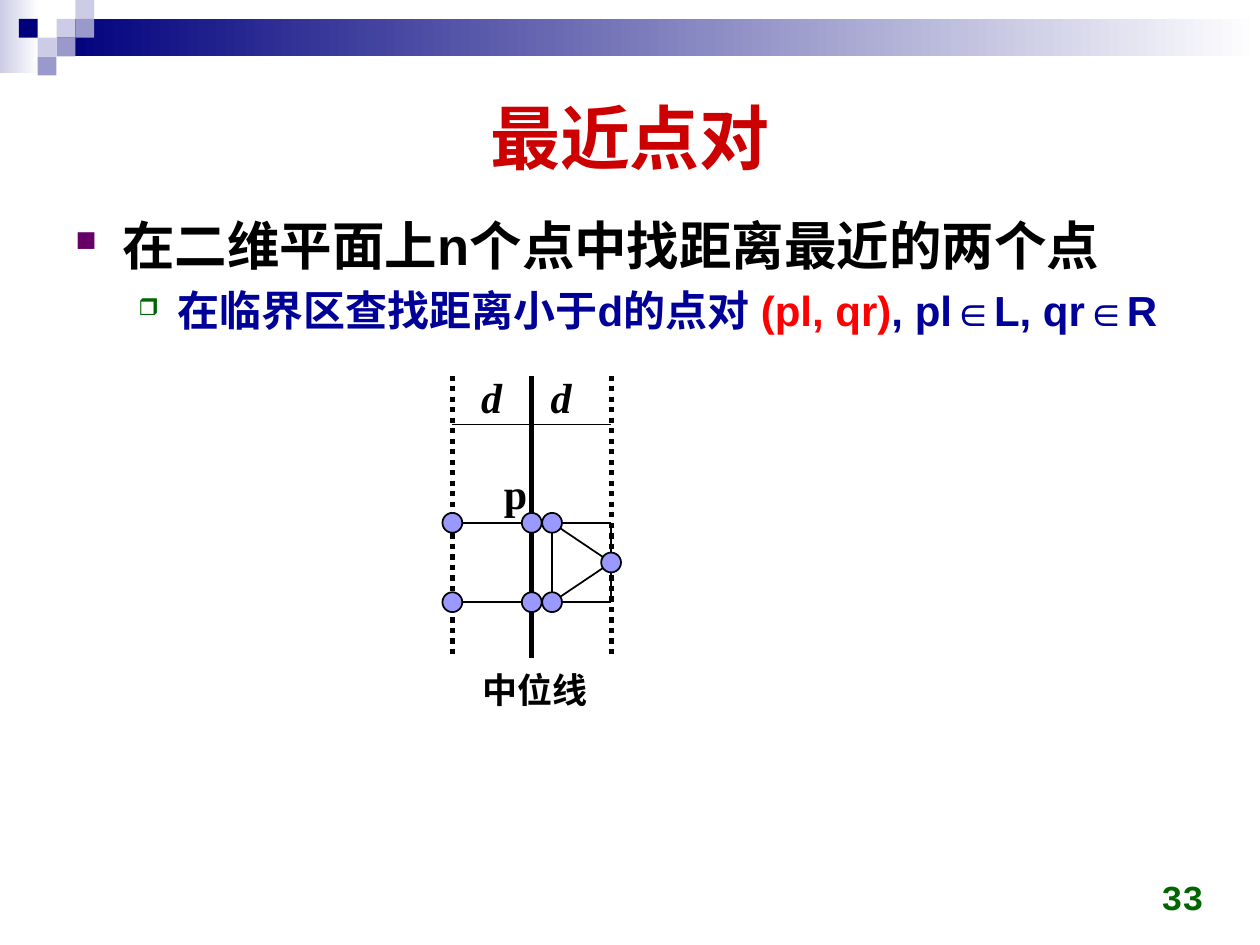
from lxml.etree import SubElement
from pptx import Presentation
from pptx.dml.color import RGBColor
from pptx.enum.dml import MSO_LINE
from pptx.enum.shapes import MSO_CONNECTOR, MSO_SHAPE
from pptx.enum.text import MSO_ANCHOR, PP_ALIGN
from pptx.oxml.ns import qn
from pptx.util import Cm, Pt

BLACK, NAVY, PALE, MEDIUM, WHITE = "000000", "00007D", "CCCCE6", "9999CC", "FFFFFF"

# Header: left, top, width, height in cm, then one colour or two for a gradient
BANDS = [(0, 0, 0.79, 1.47, (PALE, WHITE)), (1.14, 0.38, 24.26, 0.76, (NAVY, WHITE))]
TILE = 0.38
TILES = [  # column, row, colour
    (3, 1, PALE), (4, 0, PALE), (4, 1, MEDIUM), (2, 2, PALE),
    (1, 1, NAVY), (3, 2, MEDIUM), (2, 3, MEDIUM),
]

# Each item: size, indent and hanging in cm, bullet, bullet colour, runs
BODY = [
    (30, 0.95, 0.95, "■", "660066", [("在二维平面上n个点中找距离最近的两个点", BLACK)]),
    (24, 2.06, 0.79, "❒", "006600", [
        ("在临界区查找距离小于d的点对 ", "000099"),
        ("(pl, qr)", "FF0000"),
        (", pl∈L, qr∈R", "000099"),
    ]),
]

# Diagram, in cm: a strip of half-width D on both sides of the median line
D = 1.6
MEDIAN = 10.72
LEFT, RIGHT = MEDIAN - D, MEDIAN + D
INNER = 11.13
STRIP_TOP, STRIP_BOTTOM = 7.57, 13.26
MEASURE = 8.56
UPPER = 10.54
LOWER = UPPER + D
APEX = UPPER + D / 2
RADIUS = 0.2
BORDERS = [(LEFT, MSO_LINE.ROUND_DOT), (MEDIAN, None), (RIGHT, MSO_LINE.ROUND_DOT)]
EDGES = [
    (LEFT, MEASURE, RIGHT, MEASURE),
    (LEFT, UPPER, RIGHT, UPPER),
    (LEFT, LOWER, RIGHT, LOWER),
    (RIGHT, UPPER, RIGHT, LOWER),
    (INNER, UPPER, INNER, LOWER),
    (INNER, UPPER, RIGHT, APEX),
    (INNER, LOWER, RIGHT, APEX),
]
POINTS = [(x, y) for x in (LEFT, MEDIAN, INNER) for y in (UPPER, LOWER)] + [(RIGHT, APEX)]
LABELS = [  # text, left, top, width, height, size, font, italic
    ("p", 9.91, 9.3, 0.99, 1.3, 24, "Times New Roman", False),
    ("d", 9.45, 7.37, 0.94, 1.3, 24, "Times New Roman", True),
    ("d", 10.85, 7.37, 0.94, 1.3, 24, "Times New Roman", True),
    ("中位线", 9.47, 13.36, 2.67, 1.12, 20, "Arial", False),
]


def rgb(value):
    return RGBColor.from_string(value)


def style_run(run, size, color, font="Arial", italic=False):
    run.font.size, run.font.name = Pt(size), font
    run.font.bold, run.font.italic = True, italic
    run.font.color.rgb = rgb(color)
    SubElement(run._r.get_or_add_rPr(), qn("a:ea")).set("typeface", font)


def add_text_box(slide, left, top, width, height, anchor=MSO_ANCHOR.TOP, wrap=True):
    text_frame = slide.shapes.add_textbox(Cm(left), Cm(top), Cm(width), Cm(height)).text_frame
    text_frame.word_wrap, text_frame.vertical_anchor = wrap, anchor
    return text_frame


def add_line_of_text(slide, text, box, size, color, font="Arial", italic=False,
                     align=PP_ALIGN.LEFT, **options):
    text_frame = add_text_box(slide, *box, **options)
    text_frame.text = text
    paragraph = text_frame.paragraphs[0]
    paragraph.alignment = align
    style_run(paragraph.runs[0], size, color, font, italic)


def add_filled(slide, kind, left, top, width, height, fill):
    shape = slide.shapes.add_shape(kind, Cm(left), Cm(top), Cm(width), Cm(height))
    shape.shadow.inherit = False
    shape.line.fill.background()
    if isinstance(fill, tuple):
        shape.fill.gradient()
        shape.fill.gradient_angle = 0
        for stop, color in zip(shape.fill.gradient_stops, fill):
            stop.color.rgb = rgb(color)
    else:
        shape.fill.solid()
        shape.fill.fore_color.rgb = rgb(fill)
    return shape


def add_line(slide, x1, y1, x2, y2, width=1, dash=None):
    line = slide.shapes.add_connector(MSO_CONNECTOR.STRAIGHT, Cm(x1), Cm(y1), Cm(x2), Cm(y2))
    line.line.color.rgb = rgb(BLACK)
    line.line.width = Pt(width)
    if dash:
        line.line.dash_style = dash
    SubElement(line._element.spPr, qn("a:effectLst"))


def set_bullet(paragraph, character, color, indent, hanging):
    properties = paragraph._p.get_or_add_pPr()
    properties.set("marL", str(Cm(indent)))
    properties.set("indent", str(-Cm(hanging)))
    bullet_color = SubElement(properties, qn("a:buClr"))
    SubElement(bullet_color, qn("a:srgbClr")).set("val", color)
    SubElement(properties, qn("a:buSzPct")).set("val", "55000")
    SubElement(properties, qn("a:buChar")).set("char", character)


def add_header(slide):
    for *box, colors in BANDS:
        add_filled(slide, MSO_SHAPE.RECTANGLE, *box, colors)
    for column, row, color in TILES:
        add_filled(slide, MSO_SHAPE.RECTANGLE, column * TILE, row * TILE, TILE, TILE, color)


def add_body(slide):
    text_frame = add_text_box(slide, 1.27, 4.11, 22.8, 13.2)
    for index, (size, indent, hanging, bullet, bullet_color, runs) in enumerate(BODY):
        paragraph = text_frame.add_paragraph() if index else text_frame.paragraphs[0]
        paragraph.level = index
        paragraph.line_spacing = 1.05
        paragraph.space_before = Pt(size * 0.15)
        set_bullet(paragraph, bullet, bullet_color, indent, hanging)
        for text, color in runs:
            run = paragraph.add_run()
            run.text = text
            style_run(run, size, color)


def add_diagram(slide):
    for x, dash in BORDERS:
        add_line(slide, x, STRIP_TOP, x, STRIP_BOTTOM, 3, dash)
    for edge in EDGES:
        add_line(slide, *edge)
    for text, *box, size, font, italic in LABELS:
        add_line_of_text(slide, text, box, size, BLACK, font, italic, wrap=False)
    for x, y in POINTS:
        point = add_filled(slide, MSO_SHAPE.OVAL, x - RADIUS, y - RADIUS,
                           2 * RADIUS, 2 * RADIUS, "9999FF")
        point.line.color.rgb = rgb(BLACK)
        point.line.width = Pt(1)


def main():
    presentation = Presentation()
    presentation.slide_width, presentation.slide_height = Cm(25.4), Cm(19.05)
    slide = presentation.slides.add_slide(presentation.slide_layouts[6])
    add_header(slide)
    add_line_of_text(slide, "最近点对", (1.27, 1.27, 22.86, 2.95), 40, "CC0000",
                     align=PP_ALIGN.CENTER, anchor=MSO_ANCHOR.MIDDLE)
    add_body(slide)
    add_line_of_text(slide, "33", (18.59, 17.35, 5.92, 1.27), 20, "006600", "Courier New",
                     align=PP_ALIGN.RIGHT, anchor=MSO_ANCHOR.BOTTOM)
    add_diagram(slide)
    presentation.save("out.pptx")


if __name__ == "__main__":
    main()
